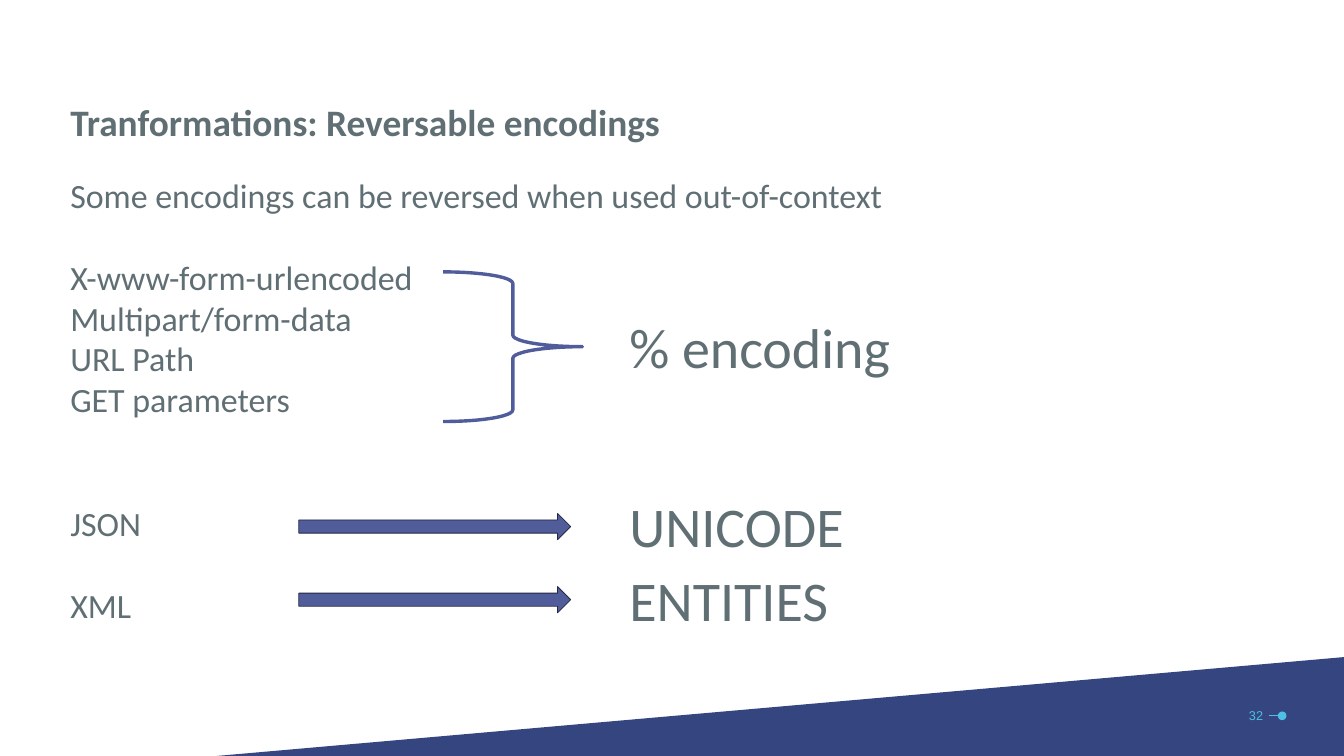
from pptx import Presentation
from pptx.dml.color import RGBColor
from pptx.enum.shapes import MSO_CONNECTOR, MSO_SHAPE
from pptx.enum.text import MSO_ANCHOR, PP_ALIGN
from pptx.util import Cm, Pt
from lxml.etree import SubElement
from pptx.oxml.ns import qn

COLORS = {
    "text": "606F74",
    "band": "35457F",
    "accent": "4DC0E3",
    "diagram": "515C9A",
    "outline": "242843",
}
SLIDE_WIDTH, SLIDE_HEIGHT = 55.86, 31.42
BODY_LINE = 48.8  # height of one 40 pt line, in points

# Text and the number of empty lines above it
ENCODINGS = [
    ("Some encodings can be reversed when used out-of-context", 0),
    ("X-www-form-urlencoded", 1),
    ("Multipart/form-data", 0),
    ("URL Path", 0),
    ("GET parameters", 0),
    ("JSON", 2),
    ("XML", 1),
]
# Text, top and width of the results on the right
RESULTS = [
    ("% encoding", 12.85, 11.46),
    ("UNICODE", 20.32, 9.53),
    ("ENTITIES", 23.39, 8.86),
]
ARROW_TOPS = [21.34, 24.38]


def color(name):
    return RGBColor.from_string(COLORS[name])


def place(shape, left, top, width, height):
    shape.left, shape.top = Cm(left), Cm(top)
    shape.width, shape.height = Cm(width), Cm(height)


def format_paragraph(paragraph, size, color_name="text", name="Calibri", bold=False):
    font = paragraph.font
    font.size, font.name, font.bold = Pt(size), name, bold
    font.color.rgb = color(color_name)


def format_frame(frame):
    frame.margin_left = frame.margin_right = 0
    frame.margin_top = frame.margin_bottom = 0
    frame.vertical_anchor = MSO_ANCHOR.TOP
    frame.word_wrap = True


def fill_title(shape, text):
    place(shape, 2.92, 4.14, 42.6, 1.9)
    format_frame(shape.text_frame)
    shape.text_frame.text = text
    paragraph = shape.text_frame.paragraphs[0]
    paragraph.alignment = PP_ALIGN.LEFT
    format_paragraph(paragraph, 44, bold=True)


def fill_body(shape, lines):
    place(shape, 2.92, 7.24, 42.6, 18.95)
    frame = shape.text_frame
    format_frame(frame)
    frame.text = "\n".join(text for text, _ in lines)
    for paragraph, (_, gap) in zip(frame.paragraphs, lines):
        properties = paragraph._p.get_or_add_pPr()
        properties.set("marL", "0")
        properties.set("indent", "0")
        SubElement(properties, qn("a:buNone"))
        paragraph.space_before = Pt(gap * BODY_LINE)
        format_paragraph(paragraph, 40)


def add_text(slide, text, left, top, width, height):
    box = slide.shapes.add_textbox(Cm(left), Cm(top), Cm(width), Cm(height))
    box.text_frame.word_wrap = False
    box.text_frame.text = text
    return box.text_frame.paragraphs[0]


def style_shape(shape, fill=None, line=None, line_width=1):
    shape.shadow.inherit = False
    if fill:
        shape.fill.solid()
        shape.fill.fore_color.rgb = color(fill)
    else:
        shape.fill.background()
    if line:
        shape.line.color.rgb = color(line)
        shape.line.width = Pt(line_width)
    else:
        shape.line.fill.background()


def add_preset(slide, kind, left, top, width, height, **style):
    shape = slide.shapes.add_shape(kind, Cm(left), Cm(top), Cm(width), Cm(height))
    style_shape(shape, **style)


def add_band(slide):
    builder = slide.shapes.build_freeform(Cm(9), Cm(SLIDE_HEIGHT))
    builder.add_line_segments(
        [(Cm(SLIDE_WIDTH), Cm(27.31)), (Cm(SLIDE_WIDTH), Cm(SLIDE_HEIGHT))]
    )
    style_shape(builder.convert_to_shape(), fill="band")


def add_page_marker(slide, number):
    add_preset(slide, MSO_SHAPE.OVAL, 53.11, 29.57, 0.36, 0.36, fill="accent")
    line = slide.shapes.add_connector(
        MSO_CONNECTOR.STRAIGHT, Cm(53.31), Cm(29.75), Cm(52.76), Cm(29.75)
    )
    line.line.color.rgb = color("accent")
    line.line.width = Pt(1)
    SubElement(line._element.spPr, qn("a:effectLst"))
    paragraph = add_text(slide, number, 50.77, 29.29, 1.98, 0.89)
    paragraph.alignment = PP_ALIGN.RIGHT
    format_paragraph(paragraph, 15, "accent", "Arial")


def main():
    presentation = Presentation()
    presentation.slide_width = Cm(SLIDE_WIDTH)
    presentation.slide_height = Cm(SLIDE_HEIGHT)
    slide = presentation.slides.add_slide(presentation.slide_layouts[1])

    # Footer
    add_band(slide)
    add_page_marker(slide, "32")

    # Title and list
    fill_title(slide.shapes.title, "Tranformations: Reversable encodings")
    fill_body(slide.placeholders[1], ENCODINGS)

    # Brace, results and arrows
    add_preset(slide, MSO_SHAPE.RIGHT_BRACE, 18.42, 11.3, 5.79, 6.22,
               line="diagram", line_width=4)
    for text, top, width in RESULTS:
        format_paragraph(add_text(slide, text, 25.91, top, width, 3.07), 66)
    for top in ARROW_TOPS:
        add_preset(slide, MSO_SHAPE.RIGHT_ARROW, 12.42, top, 11.3, 1.09,
                   fill="diagram", line="outline")

    presentation.save("out.pptx")


if __name__ == "__main__":
    main()
